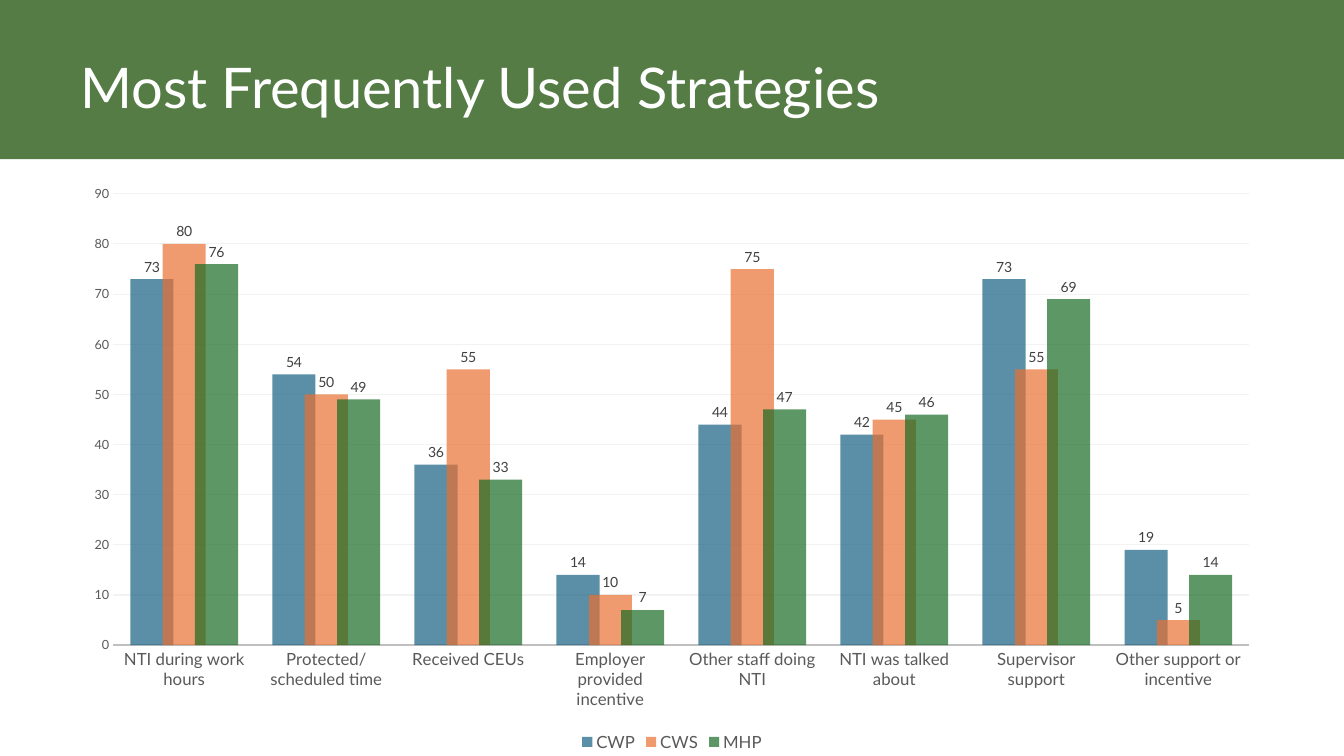
from dataclasses import dataclass

from lxml import etree
from pptx import Presentation
from pptx.chart.data import CategoryChartData
from pptx.dml.color import RGBColor as RGB
from pptx.enum.chart import (XL_CHART_TYPE as ChartType, XL_LABEL_POSITION as LabelPos,
                             XL_LEGEND_POSITION as LegendPos, XL_TICK_MARK as Tick)
from pptx.enum.shapes import MSO_SHAPE as Shape
from pptx.enum.text import MSO_ANCHOR as Anchor
from pptx.oxml.ns import qn
from pptx.util import Inches, Pt


@dataclass(frozen=True)
class Theme:
    font: str = "Lato"
    band: str = "557C45"
    title: str = "FFFFFF"
    text: str = "595959"
    value: str = "404040"
    axis: str = "BFBFBF"
    grid: str = "F2F2F2"
    series: tuple = ("156082", "E97132", "196B24")
    opacity: int = 70
    title_size: int = 40
    label_size: int = 12
    value_size: int = 10
    tick_size: int = 9


T = Theme()
W, H = 13.33, 7.5
MARGIN = 0.7
BAND_H = 1.58
CHART_TOP = 1.73

CATEGORIES = ("NTI during work hours", "Protected/scheduled time", "Received CEUs",
              "Employer provided incentive", "Other staff doing NTI",
              "NTI was talked about", "Supervisor support", "Other support or incentive")
STRATEGIES = {
    "CWP": (73, 54, 36, 14, 44, 42, 73, 19),
    "CWS": (80, 50, 55, 10, 75, 45, 55, 5),
    "MHP": (76, 49, 33, 7, 47, 46, 69, 14),
}


def style_font(font, size, color):
    font.name, font.size = T.font, Pt(size)
    font.color.rgb = RGB.from_string(color)


def style_line(line, color, width):
    line.color.rgb = RGB.from_string(color)
    line.width = Pt(width)


def add_header(s, x, y, w, h, title):
    # Full-width band
    band = s.shapes.add_shape(Shape.RECTANGLE, Inches(x), Inches(y), Inches(w), Inches(h))
    band.shadow.inherit = False
    band.fill.solid()
    band.fill.fore_color.rgb = RGB.from_string(T.band)
    band.line.fill.background()

    # Title inside the band
    box = s.shapes.add_textbox(Inches(x + MARGIN), Inches(y + 0.28),
                               Inches(w - 2 * MARGIN), Inches(1.23))
    tf = box.text_frame
    tf.word_wrap = True
    tf.vertical_anchor = Anchor.MIDDLE
    p = tf.paragraphs[0]
    p.text = title
    p.line_spacing = 0.9
    style_font(p.font, T.title_size, T.title)


def style_axes(chart):
    cat, val = chart.category_axis, chart.value_axis
    for axis, size in ((cat, T.label_size), (val, T.tick_size)):
        axis.major_tick_mark = axis.minor_tick_mark = Tick.NONE
        style_font(axis.tick_labels.font, size, T.text)
    style_line(cat.format.line, T.axis, 1.25)
    val.format.line.fill.background()
    val.minimum_scale, val.maximum_scale, val.major_unit = 0, 90, 10
    style_line(val.major_gridlines.format.line, T.grid, 0.75)


def style_series(series, color):
    # Translucent bars
    fill = series.format.fill
    fill.solid()
    fill.fore_color.rgb = RGB.from_string(color)
    for clr in series.format._element.spPr.iter(qn("a:srgbClr")):
        etree.SubElement(clr, qn("a:alpha"), val=str(T.opacity * 1000))
    series.invert_if_negative = False

    # Values above the bars
    labels = series.data_labels
    labels.show_value = True
    labels.position = LabelPos.OUTSIDE_END
    style_font(labels.font, T.value_size, T.value)


def add_strategy_chart(s, x, y, w, h):
    data = CategoryChartData()
    data.categories = CATEGORIES
    for name, values in STRATEGIES.items():
        data.add_series(name, values)
    chart = s.shapes.add_chart(ChartType.COLUMN_CLUSTERED, Inches(x), Inches(y),
                               Inches(w), Inches(h), data).chart
    chart.has_title = False
    style_font(chart.font, T.value_size, T.text)

    # Bars
    plot = chart.plots[0]
    plot.vary_by_categories = False
    plot.gap_width, plot.overlap = 80, 25
    for series, color in zip(plot.series, T.series):
        style_series(series, color)
    style_axes(chart)

    # Legend
    chart.has_legend = True
    chart.legend.position = LegendPos.BOTTOM
    chart.legend.include_in_layout = False
    style_font(chart.legend.font, T.label_size, T.text)


def main():
    prs = Presentation()
    prs.slide_width, prs.slide_height = Inches(W), Inches(H)
    s = prs.slides.add_slide(prs.slide_layouts[6])
    add_header(s, 0, 0, W, BAND_H, "Most Frequently Used Strategies")
    add_strategy_chart(s, MARGIN, CHART_TOP, W - 2 * MARGIN, H - CHART_TOP)
    prs.save("out.pptx")


if __name__ == "__main__":
    main()
